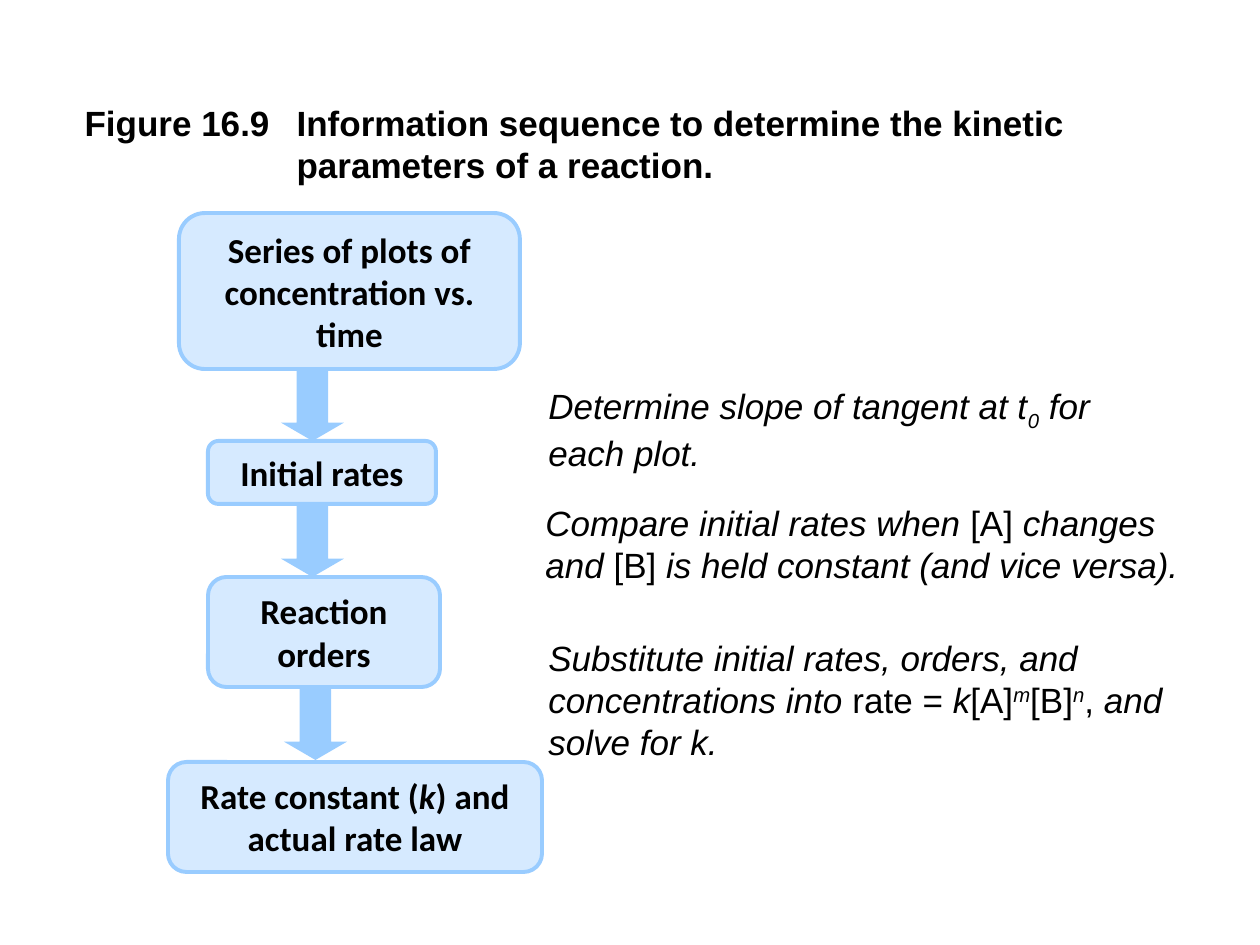
from lxml.etree import SubElement
from pptx import Presentation
from pptx.dml.color import RGBColor
from pptx.enum.shapes import MSO_SHAPE
from pptx.enum.text import MSO_ANCHOR, MSO_AUTO_SIZE, PP_ALIGN
from pptx.oxml.ns import qn
from pptx.util import Emu, Pt

COLORS = {"text": "000000", "blue": "99CCFF"}
PX_PER_INCH = 126


def px(n):
    return Emu(round(n * 914400 / PX_PER_INCH))


class FlowSlide:
    size = Pt(20)
    body_font = "Arial"
    box_font = "Calibri"

    def __init__(self, prs):
        self.s = prs.slides.add_slide(prs.slide_layouts[5])

    def color(self, name):
        return RGBColor.from_string(COLORS[name])

    def add_text(self, sp, runs, font, bold=False, align=PP_ALIGN.LEFT, anchor=MSO_ANCHOR.TOP):
        tf = sp.text_frame
        tf.word_wrap = True
        tf.auto_size = MSO_AUTO_SIZE.NONE
        tf.vertical_anchor = anchor
        p = tf.paragraphs[0]
        p.alignment = align
        for text, italic, baseline in runs:
            r = p.add_run()
            r.text = text
            r.font.name = font
            r.font.size = self.size
            r.font.bold = bold
            r.font.italic = italic
            r.font.color.rgb = self.color("text")
            if baseline:
                r._r.get_or_add_rPr().set("baseline", str(baseline * 1000))
        return p

    def title(self, text, x, y, w, h, indent):
        sp = self.s.shapes.title
        sp.left, sp.top, sp.width, sp.height = map(px, (x, y, w, h))
        p = self.add_text(sp, [(text, False, 0)], self.body_font, bold=True)
        pPr = p._p.get_or_add_pPr()
        pPr.set("marL", str(px(indent)))
        pPr.set("indent", str(-px(indent)))

    def shape(self, kind, x, y, w, h):
        sp = self.s.shapes.add_shape(kind, *map(px, (x, y, w, h)))
        sp.shadow.inherit = False
        sp.fill.solid()
        sp.fill.fore_color.rgb = self.color("blue")
        return sp

    def box(self, runs, x, y, w, h):
        sp = self.shape(MSO_SHAPE.ROUNDED_RECTANGLE, x, y, w, h)
        fill = sp._element.spPr.find(qn("a:solidFill"))
        SubElement(fill[0], qn("a:alpha"), val="40000")
        sp.line.color.rgb = self.color("blue")
        sp.line.width = Pt(2.25)
        self.add_text(sp, runs, self.box_font, True, PP_ALIGN.CENTER, MSO_ANCHOR.MIDDLE)

    def arrow(self, x, y, w=63, h=73):
        sp = self.shape(MSO_SHAPE.DOWN_ARROW, x, y, w, h)
        sp.adjustments[0] = 0.5
        sp.adjustments[1] = 0.29
        sp.line.fill.background()

    def note(self, runs, x, y, w, h):
        sp = self.s.shapes.add_textbox(*map(px, (x, y, w, h)))
        self.add_text(sp, runs, self.body_font)


def main():
    prs = Presentation()
    prs.slide_width = px(1260)
    prs.slide_height = px(945)
    s = FlowSlide(prs)

    s.title(
        "Figure 16.9\tInformation sequence to determine the kinetic parameters of a reaction.",
        72, 95, 1042, 97, indent=212,
    )

    boxes = [
        ([("Series of plots of concentration vs. time", False, 0)], 179, 213, 341, 156),
        ([("Initial rates", False, 0)], 208, 441, 228, 63),
        ([("Reaction orders", False, 0)], 208, 577, 232, 110),
        ([("Rate constant (", False, 0), ("k", True, 0), (") and actual rate law", False, 0)],
         168, 762, 374, 110),
    ]
    for box in boxes:
        s.box(*box)
    for x, y in [(281, 368), (281, 504), (284, 687)]:
        s.arrow(x, y)

    notes = [
        ([("Determine slope of tangent at t", True, 0), ("0", True, -25),
          (" for each plot.", True, 0)], 536, 378, 591, 97),
        ([("Compare initial rates when", True, 0), (" [A]", False, 0),
          (" changes and ", True, 0), ("[B]", False, 0),
          (" is held constant (and vice versa).", True, 0)], 533, 495, 703, 97),
        ([("Substitute initial rates, orders, and concentrations into ", True, 0),
          ("rate = ", False, 0), ("k", True, 0), ("[A]", False, 0), ("m", True, 30),
          ("[B]", False, 0), ("n", True, 30), (", ", False, 0),
          ("and solve for k.", True, 0)], 536, 630, 703, 139),
    ]
    for note in notes:
        s.note(*note)

    prs.save("out.pptx")


if __name__ == "__main__":
    main()
